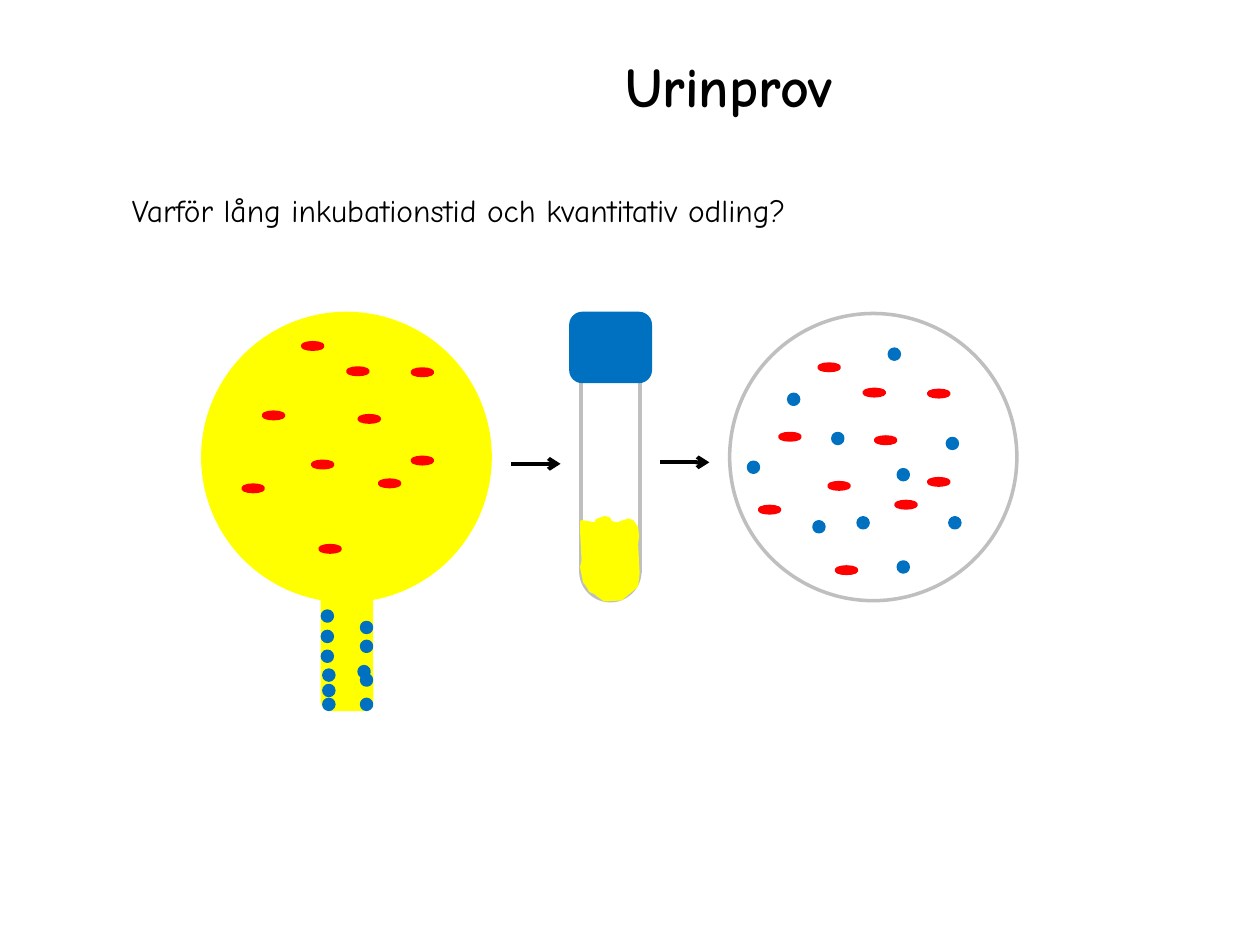
from lxml import etree
from pptx import Presentation
from pptx.dml.color import RGBColor
from pptx.enum.shapes import MSO_CONNECTOR, MSO_SHAPE
from pptx.enum.text import MSO_ANCHOR, PP_ALIGN
from pptx.oxml.ns import qn
from pptx.util import Cm, Pt

ELLIPSE, RECTANGLE = MSO_SHAPE.OVAL, MSO_SHAPE.RECTANGLE
ROUNDED = MSO_SHAPE.ROUNDED_RECTANGLE
LEFT, CENTER = PP_ALIGN.LEFT, PP_ALIGN.CENTER
TOP, MIDDLE = MSO_ANCHOR.TOP, MSO_ANCHOR.MIDDLE
YELLOW, BLUE, RED, GRAY, BLACK = "FFFF00", "0070C0", "FF0000", "BFBFBF", "000000"

presentation = Presentation()
presentation.slide_width, presentation.slide_height = Cm(25.4), Cm(19.05)
slide = presentation.slides.add_slide(presentation.slide_layouts[6])


def add_text(text, box, size, bold=False, align=LEFT, anchor=TOP):
    frame = slide.shapes.add_textbox(*map(Cm, box)).text_frame
    frame.word_wrap = True
    frame.vertical_anchor = anchor
    paragraph = frame.paragraphs[0]
    paragraph.text = text
    paragraph.alignment = align
    font = paragraph.font
    font.name, font.size, font.bold = "Comic Neue", Pt(size), bold
    font.color.rgb = RGBColor.from_string(BLACK)


def add_shape(kind, box, line, fill=None):
    """Add a preset shape, or a closed outline if kind is a list of points."""
    if isinstance(kind, list):
        points = [(Cm(x), Cm(y)) for x, y in kind]
        builder = slide.shapes.build_freeform(*points[0])
        builder.add_line_segments(points[1:], close=True)
        shape = builder.convert_to_shape()
    else:
        shape = slide.shapes.add_shape(kind, *map(Cm, box))
    shape.shadow.inherit = False
    if fill:
        shape.fill.solid()
        shape.fill.fore_color.rgb = RGBColor.from_string(fill)
    else:
        shape.fill.background()
    shape.line.color.rgb = RGBColor.from_string(line)
    shape.line.width = Pt(2)


add_text("Urinprov", (4.52, 0.53, 20.35, 2.36), 32, bold=True, align=CENTER, anchor=MIDDLE)
add_text("Varför lång inkubationstid och kvantitativ odling?", (2.41, 3.73, 21.69, 1.02), 18)

# Bladder, urethra and culture plate
add_shape(ELLIPSE, (4.09, 6.32, 5.79, 5.79), YELLOW, YELLOW)
add_shape(ROUNDED, (6.5, 11.91, 0.99, 2.39), YELLOW, YELLOW)
add_shape(ELLIPSE, (14.71, 6.32, 5.79, 5.79), GRAY)

# The bladder bacteria appear in the same pattern on the plate
bladder_bacteria = [
    (6.1, 6.91), (7.24, 8.38), (8.31, 7.44), (5.31, 8.31), (8.31, 9.22),
    (6.3, 9.3), (7.01, 7.42), (4.9, 9.78), (7.65, 9.68), (6.45, 11),
]
for shift_x, shift_y in [(0, 0), (10.41, 0.43)]:
    for x, y in bladder_bacteria:
        add_shape(ELLIPSE, (x + shift_x, y + shift_y, 0.41, 0.13), RED, RED)

urethra_bacteria = [
    (6.5, 12.32), (6.5, 12.73), (6.5, 13.13), (6.53, 13.51), (6.53, 13.82), (6.53, 14.1),
    (7.29, 12.55), (7.29, 12.93), (7.24, 13.44), (7.29, 13.61), (7.29, 14.1),
]
plate_bacteria = [
    (18.11, 11.33), (16.41, 10.52), (15.09, 9.32), (15.9, 7.95), (18.11, 9.47),
    (19.1, 8.84), (17.93, 7.04), (16.79, 8.74), (17.3, 10.44), (19.15, 10.44),
]
for x, y in urethra_bacteria + plate_bacteria:
    add_shape(ELLIPSE, (x, y, 0.2, 0.2), BLUE, BLUE)

# Test tube with urine and cap
urine_outline = [
    (11.73, 10.52), (11.73, 10.72), (11.76, 11.3), (11.73, 11.43), (11.79, 11.73),
    (11.84, 11.79), (11.91, 11.91), (11.99, 11.94), (12.12, 12.04), (12.19, 12.09),
    (12.52, 12.07), (12.65, 11.96), (12.83, 11.81), (12.86, 11.56), (12.83, 10.97),
    (12.85, 10.8), (12.83, 10.64), (12.75, 10.52), (12.67, 10.49), (12.52, 10.54),
    (12.45, 10.57), (12.32, 10.54), (12.27, 10.46), (12.19, 10.44), (12.04, 10.49),
    (12.01, 10.57),
]
add_shape(RECTANGLE, (11.71, 6.53, 1.19, 5), GRAY)
add_shape(ELLIPSE, (11.71, 10.92, 1.19, 1.19), GRAY)
add_shape(urine_outline, None, YELLOW, YELLOW)
add_shape(ROUNDED, (11.51, 6.32, 1.6, 1.37), BLUE, BLUE)

for x, y in [(10.31, 9.35), (13.31, 9.32)]:
    arrow = slide.shapes.add_connector(MSO_CONNECTOR.STRAIGHT, Cm(x), Cm(y), Cm(x + 0.99), Cm(y))
    arrow.line.color.rgb = RGBColor.from_string(BLACK)
    arrow.line.width = Pt(2.25)
    etree.SubElement(arrow.line._get_or_add_ln(), qn("a:tailEnd"), type="arrow")
    etree.SubElement(arrow._element.spPr, qn("a:effectLst"))

presentation.save("out.pptx")
